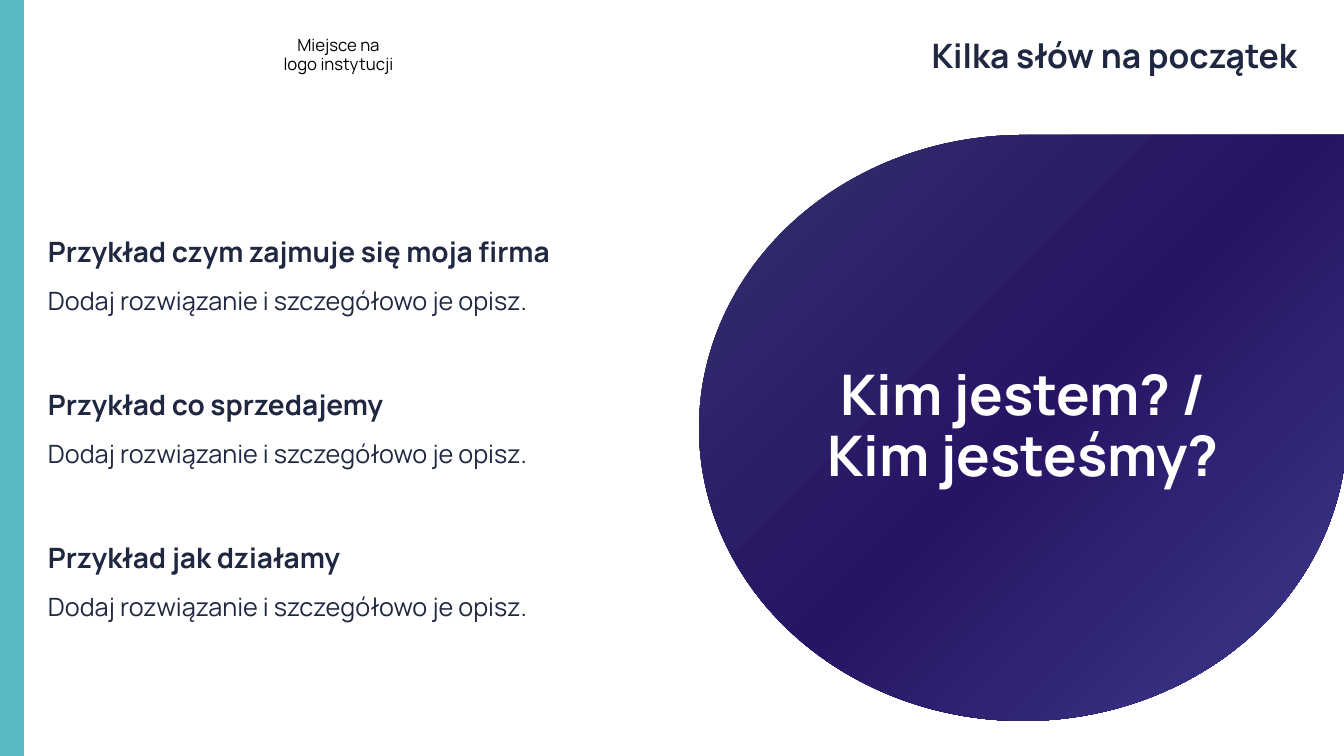
from lxml import etree
from pptx import Presentation
from pptx.dml.color import RGBColor
from pptx.enum.shapes import MSO_SHAPE as SHAPE
from pptx.enum.text import MSO_ANCHOR as ANCHOR, PP_ALIGN as ALIGN
from pptx.oxml.ns import qn
from pptx.util import Emu, Pt

NAVY = "202841"
WHITE = "FFFFFF"


def px(n):
    return Emu(round(n * 12192000 / 1344))


def rgb(value):
    return RGBColor.from_string(value)


class Deck:
    font = "Manrope"

    def __init__(self):
        self.prs = Presentation()
        self.prs.slide_width, self.prs.slide_height = px(1344), px(756)
        self.s = self.prs.slides.add_slide(self.prs.slide_layouts[6])

    def shape(self, kind, box, fill=WHITE):
        sp = self.s.shapes.add_shape(kind, *map(px, box))
        sp.shadow.inherit = False
        sp.line.fill.background()
        sp.fill.solid()
        sp.fill.fore_color.rgb = rgb(fill)
        return sp

    def radial(self, sp, stops):
        sp.fill.gradient()
        grad = sp.element.spPr.find(qn("a:gradFill"))
        for child in list(grad):
            grad.remove(child)
        gs_list = etree.SubElement(grad, qn("a:gsLst"))
        for pos, color in stops:
            gs = etree.SubElement(gs_list, qn("a:gs"), pos=str(pos * 1000))
            etree.SubElement(gs, qn("a:srgbClr"), val=color)
        circle = etree.SubElement(grad, qn("a:path"))
        circle.set("path", "circle")
        etree.SubElement(circle, qn("a:fillToRect"), l="100000", t="100000")

    def textbox(self, box):
        sp = self.s.shapes.add_textbox(*map(px, box))
        tf = sp.text_frame
        tf.margin_left = tf.margin_right = tf.margin_top = tf.margin_bottom = 0
        return sp

    def text(self, sp, lines, align, spacing=1.0):
        tf = sp.text_frame
        tf.word_wrap = True
        tf.vertical_anchor = ANCHOR.MIDDLE
        for i, (text, size, color, bold, before) in enumerate(lines):
            p = tf.add_paragraph() if i else tf.paragraphs[0]
            p.alignment = align
            p.line_spacing = spacing
            p.space_before = Pt(before)
            r = p.add_run()
            r.text = text
            r.font.name = self.font
            r.font.size = Pt(size)
            r.font.bold = bold
            r.font.color.rgb = rgb(color)


def main():
    deck = Deck()
    deck.shape(SHAPE.RECTANGLE, (0, 0, 24, 756), "5AB9C3")

    logo = deck.shape(SHAPE.ROUNDED_RECTANGLE, (267, 24, 143, 63))
    deck.text(logo, [("Miejsce na logo instytucji", 12, "000000", False, 0)],
              ALIGN.CENTER, 0.9)

    title = deck.textbox((370, 24, 927, 63))
    deck.text(title, [("Kilka słów na początek", 24, NAVY, True, 0)], ALIGN.RIGHT)

    topics = ["czym zajmuje się moja firma", "co sprzedajemy", "jak działamy"]
    lines = []
    for i, topic in enumerate(topics):
        lines.append((f"Przykład {topic}", 20, NAVY, True, 51.6 if i else 0))
        lines.append(("Dodaj rozwiązanie i szczegółowo je opisz.", 18, NAVY, False, 12))
    deck.text(deck.textbox((48, 135, 601, 586)), lines, ALIGN.LEFT)

    drop = deck.shape(SHAPE.TEAR, (699, 135, 648, 586))
    deck.radial(drop, [(0, "3C3C8C"), (50, "281464"), (100, "32326E")])
    deck.text(drop, [("Kim jestem? / Kim jesteśmy?", 40, WHITE, True, 0)],
              ALIGN.CENTER, 0.9)

    deck.prs.save("out.pptx")


if __name__ == "__main__":
    main()
